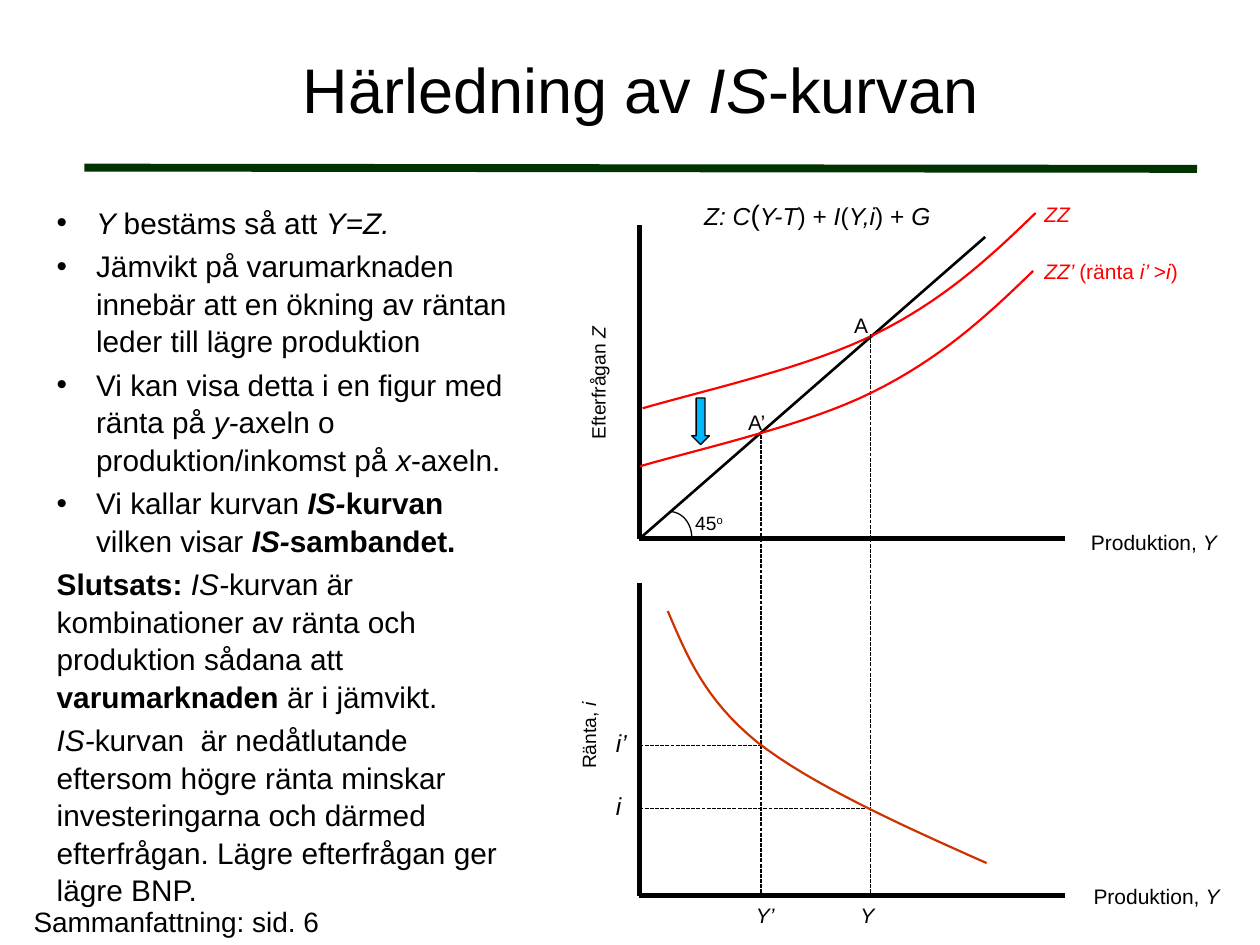
import pptx
import pptx.util
import pptx.dml.color
import pptx.enum.dml
import pptx.enum.shapes
import pptx.enum.text
import pptx.oxml
import pptx.oxml.ns

Pt = pptx.util.Pt
ALIGN = pptx.enum.text.PP_ALIGN
SHAPE = pptx.enum.shapes.MSO_SHAPE

COLORS = {
    "black": "000000",
    "rule": "003300",
    "demand": "FF0000",
    "is_curve": "CC3300",
    "arrow": "00B8FF",
}

AXIS_X, AXIS_END = 365.5, 608.4
TOP_AXIS_Y, BOTTOM_AXIS_Y = 307.8, 511.9
AXIS_HEIGHT = 179
Y_LOW, Y_HIGH = 434.9, 497.5
RATE_HIGH, RATE_LOW = 426.2, 462.2
ZZ_SHIFT = (-1.4, 33.1)


def rgb(name):
    return pptx.dml.color.RGBColor.from_string(COLORS[name])


def drawing_element(content):
    """Make an empty DrawingML element from its name and attributes."""
    return pptx.oxml.parse_xml(f'<a:{content} {pptx.oxml.ns.nsdecls("a")}/>')


def write_text(paragraph, text, size=12, color="black", big=None):
    """Add runs; _ toggles italic, * bold, ^ superscript and ~ the big size."""
    active = set()
    pending = ""
    for character in text + "_":
        if character not in "_*^~":
            pending += character
            continue
        if pending:
            run = paragraph.add_run()
            run.text = pending
            run.font.name = "Arial"
            run.font.size = Pt(big if "~" in active else size)
            run.font.italic = "_" in active
            run.font.bold = "*" in active
            run.font.color.rgb = rgb(color)
            if "^" in active:
                run.font._element.set("baseline", "30000")
        pending = ""
        active ^= {character}


def bezier_points(start, segments, steps=16):
    """Sample a chain of cubic curves, each given as two handles and an end."""
    points = [start]
    for first, second, end in segments:
        for step in range(1, steps + 1):
            t = step / steps
            u = 1 - t
            weights = (u ** 3, 3 * u * u * t, 3 * u * t * t, t ** 3)
            corners = (start, first, second, end)
            points.append(tuple(
                sum(w * corner[axis] for w, corner in zip(weights, corners))
                for axis in (0, 1)))
        start = end
    return points


class SlideBuilder:
    """Holds the current slide and the style of its elements."""

    def __init__(self, presentation):
        self.slide = presentation.slides.add_slide(presentation.slide_layouts[1])
        self.shapes = self.slide.shapes

    def place(self, shape, left, top, width, height):
        shape.left, shape.top = Pt(left), Pt(top)
        shape.width, shape.height = Pt(width), Pt(height)

    def title(self, text, box, size):
        title = self.shapes.title
        self.place(title, *box)
        title.text_frame.vertical_anchor = pptx.enum.text.MSO_ANCHOR.MIDDLE
        paragraph = title.text_frame.paragraphs[0]
        paragraph.alignment = ALIGN.CENTER
        write_text(paragraph, text, size=size)

    def body(self, items, box, size, indent):
        """Fill the body placeholder with (text, has_bullet) items."""
        body = self.slide.placeholders[1]
        self.place(body, *box)
        frame = body.text_frame
        frame.auto_size = pptx.enum.text.MSO_AUTO_SIZE.NONE
        for index, (text, has_bullet) in enumerate(items):
            paragraph = frame.add_paragraph() if index else frame.paragraphs[0]
            paragraph.space_before = paragraph.space_after = Pt(size / 10)
            paragraph.line_spacing = 1.05
            properties = paragraph._p.get_or_add_pPr()
            margin = indent if has_bullet else 0
            properties.set("marL", str(int(Pt(margin))))
            properties.set("indent", str(int(Pt(-margin))))
            properties.append(drawing_element(
                'buChar char="•"' if has_bullet else "buNone"))
            write_text(paragraph, text, size=size)

    def label(self, text, box, rotation=0, wrap=False, align=ALIGN.LEFT, **style):
        shape = self.shapes.add_textbox(*map(Pt, box))
        shape.rotation = rotation
        shape.text_frame.word_wrap = wrap
        paragraph = shape.text_frame.paragraphs[0]
        paragraph.alignment = align
        write_text(paragraph, text, **style)

    def line(self, start, end, width=0.75, color="black", dashed=False):
        connector = self.shapes.add_connector(
            pptx.enum.shapes.MSO_CONNECTOR.STRAIGHT, *map(Pt, start + end))
        self.outline(connector, width, color)
        if dashed:
            connector.line.dash_style = pptx.enum.dml.MSO_LINE.SQUARE_DOT
        connector._element.spPr.append(drawing_element("effectLst"))

    def outline(self, shape, width, color):
        shape.line.color.rgb = rgb(color)
        shape.line.width = Pt(width)

    def finish(self, shape, width, color, fill=None):
        shape.shadow.inherit = False
        self.outline(shape, width, color)
        if fill:
            shape.fill.solid()
            shape.fill.fore_color.rgb = rgb(fill)
        else:
            shape.fill.background()

    def preset(self, kind, box, fill=None):
        shape = self.shapes.add_shape(kind, *map(Pt, box))
        self.finish(shape, 0.75, "black", fill)

    def curve(self, start, segments, color, shift=(0, 0)):
        points = [(Pt(x + shift[0]), Pt(y + shift[1]))
                  for x, y in bezier_points(start, segments)]
        builder = self.shapes.build_freeform(*points[0])
        builder.add_line_segments(points[1:], close=False)
        self.finish(builder.convert_to_shape(), 1.25, color)

    def axes(self, base):
        self.line((AXIS_X - 0.5, base), (AXIS_END, base), width=3)
        self.line((AXIS_X, base), (AXIS_X, base - AXIS_HEIGHT), width=3)


def draw_demand_diagram(builder):
    builder.axes(TOP_AXIS_Y)
    builder.label("Efterfrågan _Z_", (302.4, 208.1, 79.2, 20.9), rotation=270, size=11)
    builder.line((AXIS_X, TOP_AXIS_Y), (563, 135.4), width=1.5)
    builder.label("_ZZ_", (589.7, 111.6, 29.5, 21.6), color="demand")
    builder.label("45^o^", (390.2, 288.7, 31, 20.9), size=11)
    zz_start = (367.2, 233.3)
    zz_segments = [((407.5, 221.8), (463, 209.5), (500.4, 190.8)),
                   ((537.8, 172.1), (563, 149.8), (591.8, 121.7))]
    builder.curve(zz_start, zz_segments, "demand")
    builder.label("A", (481, 175, 22.3, 21.6))
    builder.line((Y_HIGH, 190.8), (Y_HIGH, TOP_AXIS_Y), dashed=True)
    builder.preset(SHAPE.ARC, (370.1, 292.3, 25.2, 29.5))
    builder.line((Y_LOW, 248.4), (Y_LOW, TOP_AXIS_Y), dashed=True)
    builder.label("A’", (420.5, 230.4, 24.5, 21.6))
    builder.curve(zz_start, zz_segments, "demand", shift=ZZ_SHIFT)
    builder.label("_ZZ’ _(ränta _i’ _>_i_)", (589.7, 144, 91.4, 21.6), color="demand")
    builder.preset(SHAPE.DOWN_ARROW, (395.3, 227.5, 10.1, 26.6), fill="arrow")


def draw_is_diagram(builder):
    builder.axes(BOTTOM_AXIS_Y)
    builder.label("Ränta, _i_", (310.3, 409.7, 52.6, 20.9), rotation=270, size=11)
    for x, rate, name, left, width in (
            (Y_HIGH, RATE_LOW, "_Y_", 484.6, 22.3),
            (Y_LOW, RATE_HIGH, "_Y’_", 424.8, 25.2)):
        builder.line((x, TOP_AXIS_Y), (x, BOTTOM_AXIS_Y), dashed=True)
        builder.line((AXIS_X, rate), (x, rate), dashed=True)
        builder.label(name, (left, 512.3, width, 21.6))
    builder.curve((381.6, 349.2),
                  [((392.4, 374.4), (402.5, 399.6), (432.7, 424.1)),
                   ((463, 447.8), (513.4, 470.9), (563.8, 493.2))], "is_curve")
    builder.label("_i’_", (344.9, 412.6, 20.9, 24.5), size=14)
    builder.label("_i_", (344.9, 448.6, 18, 24.5), size=14)


def main():
    presentation = pptx.Presentation()
    presentation.slide_width, presentation.slide_height = Pt(720), Pt(540)
    builder = SlideBuilder(presentation)
    builder.line((48.2, 95.8), (684, 96.5), width=4.5, color="rule")
    builder.title("Härledning av _IS_-kurvan", (48.2, 5.8, 635.8, 89.3), size=36)
    builder.body([
        ("_Y _bestäms så att _Y=Z._", True),
        ("Jämvikt på varumarknaden innebär att en ökning av räntan "
         "leder till lägre produktion", True),
        ("Vi kan visa detta i en figur med ränta på _y-_axeln o "
         "produktion/inkomst på _x_-axeln.", True),
        ("Vi kallar kurvan *_IS-_kurvan *vilken visar *_IS-_sambandet.*", True),
        ("*Slutsats: *_IS-_kurvan är kombinationer av ränta och produktion "
         "sådana att *varumarknaden* är i jämvikt.", False),
        ("_IS-_kurvan  är nedåtlutande eftersom högre ränta minskar "
         "investeringarna och därmed efterfrågan. Lägre efterfrågan ger "
         "lägre BNP.", False),
    ], (25.2, 112.3, 277.9, 363.6), size=17, indent=22.5)
    draw_demand_diagram(builder)
    draw_is_diagram(builder)
    builder.label("Sammanfattning: sid. 6", (0, 513.4, 201.6, 26.6), wrap=True,
                  align=ALIGN.CENTER, size=16)
    builder.label("_Z: C_~(~_Y-T_) + _I_(_Y,i_) + _G_", (395.3, 109.4, 222.5, 26.6),
                  wrap=True, size=14, big=16)
    for left, top in ((616.3, 298.8), (617.8, 501.1)):
        builder.label("Produktion, _Y_", (left, top, 86.4, 22.3))
    presentation.save("out.pptx")


if __name__ == "__main__":
    main()
